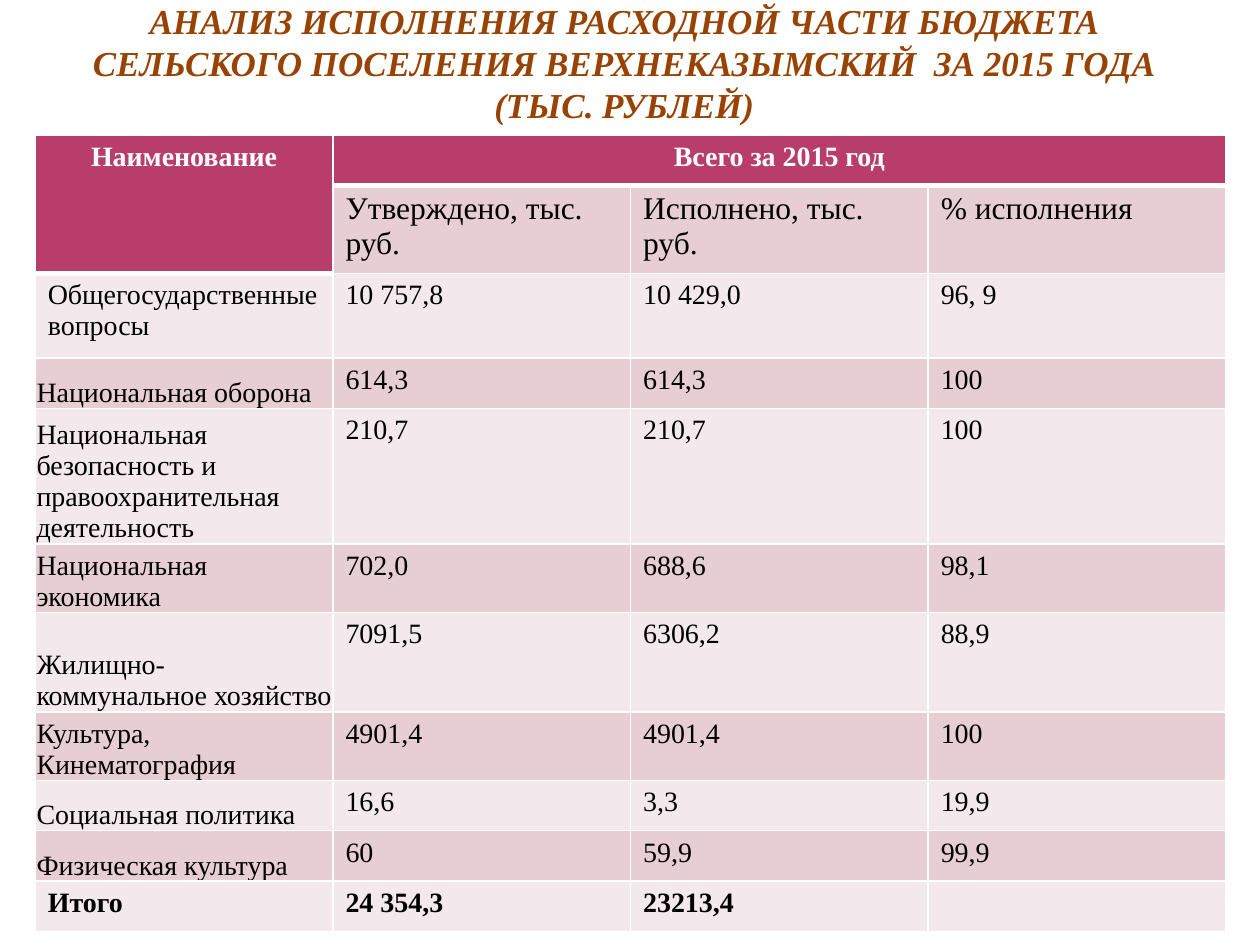
from lxml import etree
from pptx import Presentation
from pptx import util as u
from pptx.dml import color
from pptx.enum import text
from pptx.oxml import ns

FONT = "Times New Roman"
HEADER, DARK_BAND, LIGHT_BAND = "B83D68", "E6CED4", "F3E8EB"


def write(frame, words, size=16, ink="000000", bold=False, italic=False,
          align=text.PP_ALIGN.LEFT, spacing=None):
    para = frame.paragraphs[0]
    para.alignment = align
    para.line_spacing = spacing
    span = para.add_run()
    span.text = words
    span.font.name = FONT
    span.font.size = u.Pt(size)
    span.font.bold, span.font.italic = bold, italic
    span.font.color.rgb = color.RGBColor.from_string(ink)


def draw_border(cell, side, points, ink="FFFFFF"):
    properties = cell._tc.get_or_add_tcPr()
    line = etree.SubElement(properties, ns.qn(f"a:ln{side}"), w=str(u.Pt(points)))
    fill = etree.SubElement(line, ns.qn("a:solidFill"))
    etree.SubElement(fill, ns.qn("a:srgbClr"), val=ink)


deck = Presentation()
deck.slide_width, deck.slide_height = u.Inches(10), u.Inches(7.5)
page = deck.slides.add_slide(deck.slide_layouts[6])

# Title
box = page.shapes.add_textbox(u.Inches(0.5), u.Inches(0.13), u.Inches(8.91), u.Inches(0.87))
title = box.text_frame
title.word_wrap = True
title.vertical_anchor = text.MSO_ANCHOR.BOTTOM
title.margin_left = title.margin_right = u.Inches(0.05)
title.margin_top = title.margin_bottom = 0
write(title, "АНАЛИЗ ИСПОЛНЕНИЯ РАСХОДНОЙ ЧАСТИ БЮДЖЕТА СЕЛЬСКОГО ПОСЕЛЕНИЯ "
      "ВЕРХНЕКАЗЫМСКИЙ  ЗА 2015 ГОДА (ТЫС. РУБЛЕЙ)", size=20, ink="984204",
      bold=True, italic=True, align=text.PP_ALIGN.CENTER, spacing=u.Pt(24))

# Budget rows: height in inches, then the four cells
rows = [
    (0.4, "Наименование", "Всего за 2015 год", "", ""),
    (0.68, "", "Утверждено, тыс. руб.", "Исполнено, тыс. руб.", "% исполнения"),
    (0.67, "Общегосударственные вопросы", "10 757,8", "10 429,0", "96, 9"),
    (0.4, "Национальная оборона", "614,3", "614,3", "100"),
    (1.05, "Национальная безопасность и правоохранительная деятельность",
     "210,7", "210,7", "100"),
    (0.53, "Национальная экономика", "702,0", "688,6", "98,1"),
    (0.79, "Жилищно-коммунальное хозяйство", "7091,5", "6306,2", "88,9"),
    (0.53, "Культура, Кинематография", "4901,4", "4901,4", "100"),
    (0.4, "Социальная политика", "16,6", "3,3", "19,9"),
    (0.4, "Физическая культура", "60", "59,9", "99,9"),
    (0.4, "Итого", "24 354,3", "23213,4", ""),
]
total_row = len(rows) - 1

# Table grid
table = page.shapes.add_table(len(rows), 4, u.Inches(0.28), u.Inches(1.07), u.Inches(9.45),
                              u.Inches(sum(row[0] for row in rows))).table
table.cell(0, 0).merge(table.cell(1, 0))
table.cell(0, 1).merge(table.cell(0, 3))

# Cells: header on top, then alternating bands
for r, (height, *words) in enumerate(rows):
    table.rows[r].height = u.Inches(height)
    for c, word in enumerate(words):
        cell = table.cell(r, c)
        header = r == 0 or (r == 1 and c == 0)
        for side in "LRTB":
            thick = (header and side == "B") or (r == 1 and c > 0 and side == "T")
            draw_border(cell, side, 3 if thick else 1)
        band = HEADER if header else DARK_BAND if r % 2 else LIGHT_BAND
        cell.fill.solid()
        cell.fill.fore_color.rgb = color.RGBColor.from_string(band)
        if c == 0 and 3 <= r < total_row:
            cell.vertical_anchor = text.MSO_ANCHOR.BOTTOM
            cell.margin_left = cell.margin_right = cell.margin_top = u.Inches(0.01)
            cell.margin_bottom = 0
        if word:
            write(cell.text_frame, word, size=18 if r == 1 else 16,
                  ink="FFFFFF" if header else "000000", bold=header or r == total_row,
                  align=text.PP_ALIGN.CENTER if header else text.PP_ALIGN.LEFT)
        else:
            cell.text_frame.paragraphs[0].font.size = u.Pt(16)

deck.save("out.pptx")
